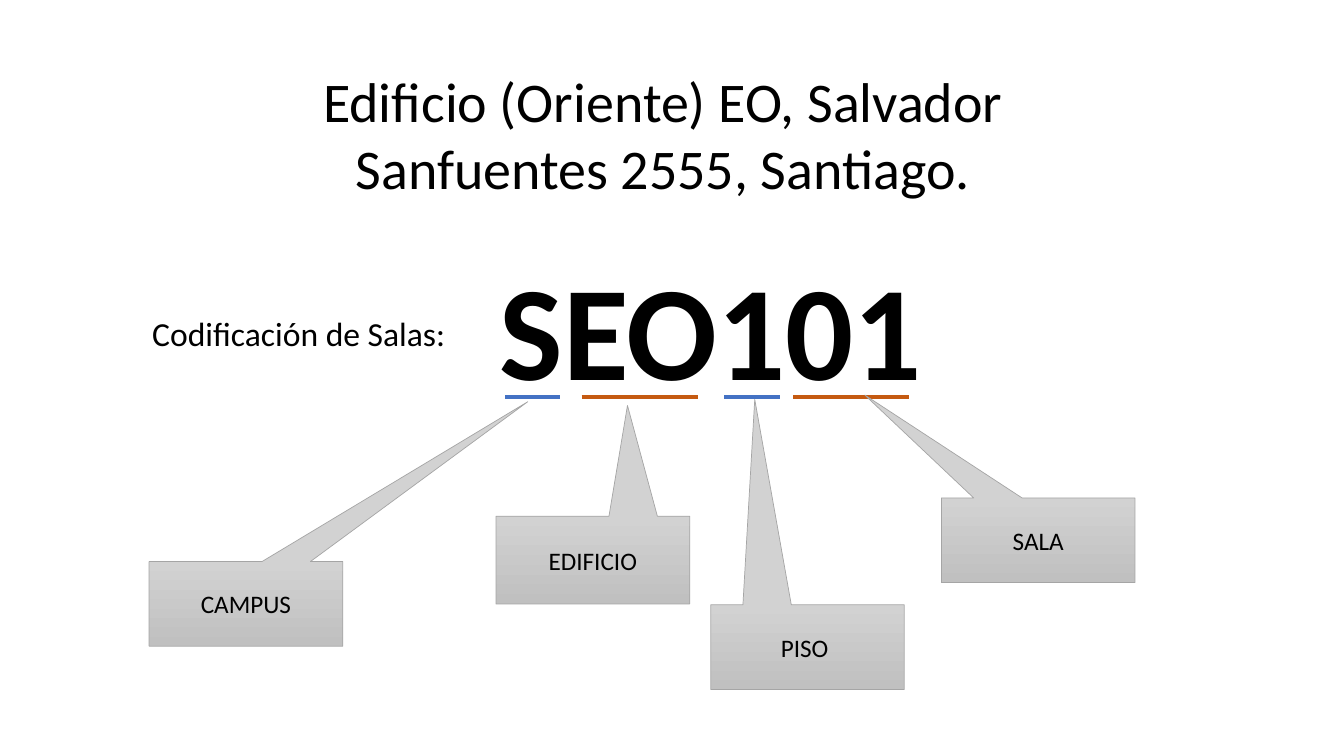
"""Build the slide that explains how room codes are put together."""
from dataclasses import dataclass
from typing import Any

from lxml import etree
from pptx import Presentation
from pptx import util as u
from pptx.dml.color import RGBColor
from pptx.enum import shapes, text
from pptx.oxml import ns

WIDTH, HEIGHT = u.Inches(13.333), u.Inches(7.5)
COLUMNS, ROWS = 64, 36
FONT = "Calibri"
COLORS = {
    "text": "000000",
    "outline": "FFFFFF",
    "blue": "4472C4",
    "orange": "C55A11",
    "callout_top": "D2D2D2",
    "callout_bottom": "C0C0C0",
    "callout_line": "A5A5A5",
}


@dataclass(frozen=True)
class Box:
    column: float
    row: float
    columns: float
    rows: float

    def lengths(self) -> tuple[int, int, int, int]:
        return (across(self.column), down(self.row),
                across(self.columns), down(self.rows))


@dataclass(frozen=True)
class Underline:
    column: float
    columns: float
    color: str


@dataclass(frozen=True)
class Callout:
    label: str
    box: Box
    tip_column: float
    tip_row: float


TITLE_BOX = Box(13.39, 2.88, 36.34, 6.96)
LABEL_BOX = Box(5.62, 14.64, 17.57, 5.66)
CODE_BOX = Box(18.24, 11.47, 31.2, 8.26)
UNDERLINE_ROW = 18.91
UNDERLINES = [
    Underline(24.05, 2.62, "blue"),
    Underline(27.7, 5.52, "orange"),
    Underline(34.5, 2.62, "blue"),
    Underline(37.78, 5.52, "orange"),
]
CALLOUTS = [
    Callout("CAMPUS", Box(7.1, 26.74, 9.22, 4.03), 25.13, 19.13),
    Callout("EDIFICIO", Box(23.62, 24.58, 9.22, 4.18), 29.88, 19.31),
    Callout("PISO ", Box(33.84, 28.8, 9.22, 4.03), 35.94, 19.02),
    Callout("SALA", Box(44.83, 23.71, 9.22, 4.03), 41.18, 18.81),
]


def across(columns: float) -> int:
    return round(WIDTH * columns / COLUMNS)


def down(rows: float) -> int:
    return round(HEIGHT * rows / ROWS)


def rgb(name: str) -> RGBColor:
    return RGBColor.from_string(COLORS[name])


def apply(target: Any, values: dict[str, Any]) -> None:
    for name, value in values.items():
        setattr(target, name, value)


def write(shape: Any, words: str, size: float, bold: bool = False,
          anchor: Any = text.MSO_ANCHOR.TOP,
          auto_size: Any = text.MSO_AUTO_SIZE.SHAPE_TO_FIT_TEXT) -> Any:
    frame = shape.text_frame
    apply(frame, {"word_wrap": True, "auto_size": auto_size,
                  "vertical_anchor": anchor})
    paragraph = frame.paragraphs[0]
    paragraph.alignment = text.PP_ALIGN.CENTER
    run = paragraph.add_run()
    run.text = words
    apply(run.font, {"name": FONT, "size": u.Pt(size), "bold": bold})
    run.font.color.rgb = rgb("text")
    return run


def outline_text(run: Any, color: str, width: float) -> None:
    line = etree.Element(ns.qn("a:ln"), w=str(u.Pt(width)))
    fill = etree.SubElement(line, ns.qn("a:solidFill"))
    etree.SubElement(fill, ns.qn("a:srgbClr"), val=COLORS[color])
    run.font._element.insert(0, line)


def draw_title(slide: Any) -> None:
    title = slide.shapes.title
    apply(title, dict(zip(("left", "top", "width", "height"),
                          TITLE_BOX.lengths())))
    write(title, "Edificio (Oriente) EO, Salvador Sanfuentes 2555, Santiago.",
          40, anchor=text.MSO_ANCHOR.MIDDLE)


def draw_underline(group: Any, underline: Underline) -> None:
    row = down(UNDERLINE_ROW)
    connector = group.shapes.add_connector(
        shapes.MSO_CONNECTOR.STRAIGHT, across(underline.column), row,
        across(underline.column + underline.columns), row)
    connector.line.width = u.Pt(3)
    connector.line.color.rgb = rgb(underline.color)
    etree.SubElement(connector._element.spPr, ns.qn("a:effectLst"))


def draw_code(slide: Any) -> None:
    group = slide.shapes.add_group_shape()
    code = group.shapes.add_textbox(*CODE_BOX.lengths())
    outline_text(write(code, "SEO101", 96, bold=True), "outline", 0.75)
    for underline in UNDERLINES:
        draw_underline(group, underline)


def draw_callout(slide: Any, callout: Callout) -> None:
    box = callout.box
    shape = slide.shapes.add_shape(
        shapes.MSO_SHAPE.RECTANGULAR_CALLOUT, *box.lengths())
    shape.adjustments[0] = (callout.tip_column - box.column) / box.columns - 0.5
    shape.adjustments[1] = (callout.tip_row - box.row) / box.rows - 0.5
    shape.shadow.inherit = False
    shape.fill.gradient()
    shape.fill.gradient_angle = 270
    for stop, name in zip(shape.fill.gradient_stops,
                          ("callout_top", "callout_bottom")):
        stop.color.rgb = rgb(name)
    shape.line.width = u.Pt(0.5)
    shape.line.color.rgb = rgb("callout_line")
    write(shape, callout.label, 18, anchor=text.MSO_ANCHOR.MIDDLE,
          auto_size=text.MSO_AUTO_SIZE.NONE)


def main() -> None:
    presentation = Presentation()
    apply(presentation, {"slide_width": WIDTH, "slide_height": HEIGHT})
    slide = presentation.slides.add_slide(presentation.slide_layouts[5])
    draw_title(slide)
    label = slide.shapes.add_textbox(*LABEL_BOX.lengths())
    write(label, "Codificación de Salas: ", 24)
    draw_code(slide)
    for callout in CALLOUTS:
        draw_callout(slide, callout)
    presentation.save("out.pptx")


if __name__ == "__main__":
    main()
